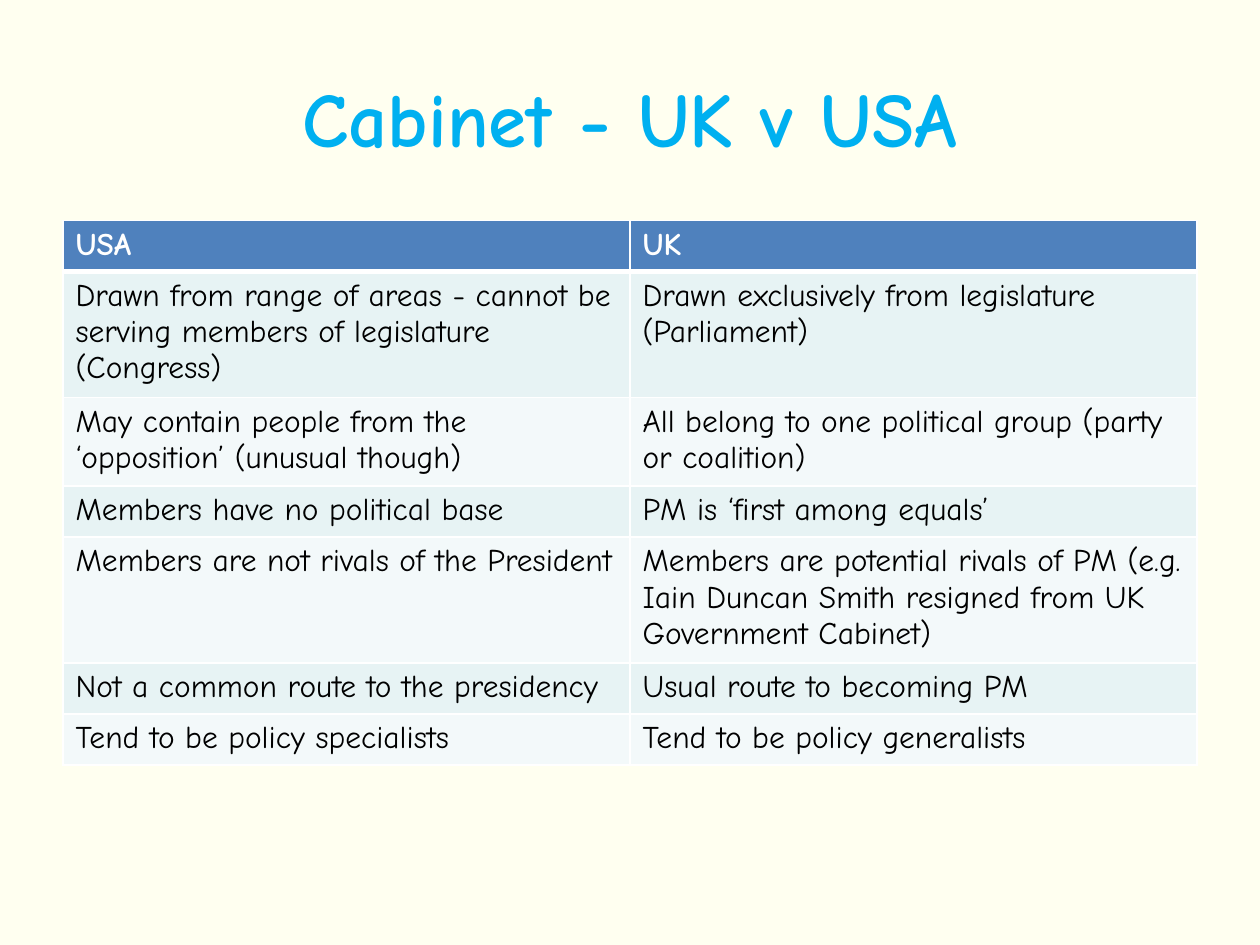
from lxml import etree
from pptx import Presentation
from pptx.dml.color import RGBColor
from pptx.enum import text
from pptx.oxml import ns
from pptx.util import Pt

FONT = "Comic Neue"
TITLE = "Cabinet - UK v USA"
ROWS = [
    ("USA", "UK"),
    ("Drawn from range of areas - cannot be serving members of legislature (Congress)",
     "Drawn exclusively from legislature (Parliament)"),
    ("May contain people from the ‘opposition’ (unusual though)",
     "All belong to one political group (party or coalition)"),
    ("Members have no political base", "PM is ‘first among equals’"),
    ("Members are not rivals of the President",
     "Members are potential rivals of PM (e.g. Iain Duncan Smith resigned from UK "
     "Government Cabinet)"),
    ("Not a common route to the presidency", "Usual route to becoming PM"),
    ("Tend to be policy specialists", "Tend to be policy generalists"),
]
HEADER_FILL = "4F81BD"
BAND_FILLS = ("F3F9FA", "E7F3F4")  # even rows, odd rows
LEFT, WIDTH = 36, 648
ROW_HEIGHT = 29.2


def paint(fill, color):
    fill.solid()
    fill.fore_color.rgb = RGBColor.from_string(color)


def style_font(paragraph, size, color, bold):
    font = paragraph.font
    font.name, font.size, font.bold = FONT, Pt(size), bold
    font.color.rgb = RGBColor.from_string(color)


def set_borders(cell, widths, color="FFFFFF"):
    """Draw the cell's sides; widths are points for left, right, top, bottom."""
    properties = cell._tc.get_or_add_tcPr()
    for position, (side, width) in enumerate(zip("LRTB", widths)):
        line = etree.Element(ns.qn(f"a:ln{side}"), w=str(Pt(width)))
        solid = etree.SubElement(line, ns.qn("a:solidFill"))
        etree.SubElement(solid, ns.qn("a:srgbClr"), val=color)
        properties.insert(position, line)


def add_title(slide):
    box = slide.shapes.add_textbox(Pt(LEFT), Pt(21.6), Pt(WIDTH), Pt(90))
    frame = box.text_frame
    frame.word_wrap = True
    frame.vertical_anchor = text.MSO_ANCHOR.MIDDLE
    paragraph = frame.paragraphs[0]
    paragraph.text = TITLE
    paragraph.alignment = text.PP_ALIGN.CENTER
    style_font(paragraph, 44, "00B0F0", True)


def add_comparison(slide):
    table = slide.shapes.add_table(
        len(ROWS), len(ROWS[0]), Pt(LEFT), Pt(126), Pt(WIDTH), Pt(ROW_HEIGHT * len(ROWS))
    ).table
    for row_index, row in enumerate(ROWS):
        header = row_index == 0
        top = 3 if row_index == 1 else 1
        bottom = 3 if header else 1
        for column_index, wording in enumerate(row):
            cell = table.cell(row_index, column_index)
            cell.text = wording
            style_font(cell.text_frame.paragraphs[0], 18,
                       "FFFFFF" if header else "000000", header)
            paint(cell.fill, HEADER_FILL if header else BAND_FILLS[row_index % 2])
            set_borders(cell, (1, 1, top, bottom))


def main():
    presentation = Presentation()
    presentation.slide_width, presentation.slide_height = Pt(720), Pt(540)
    slide = presentation.slides.add_slide(presentation.slide_layouts[6])
    paint(slide.background.fill, "FFFFF0")
    add_title(slide)
    add_comparison(slide)
    presentation.save("out.pptx")


if __name__ == "__main__":
    main()
